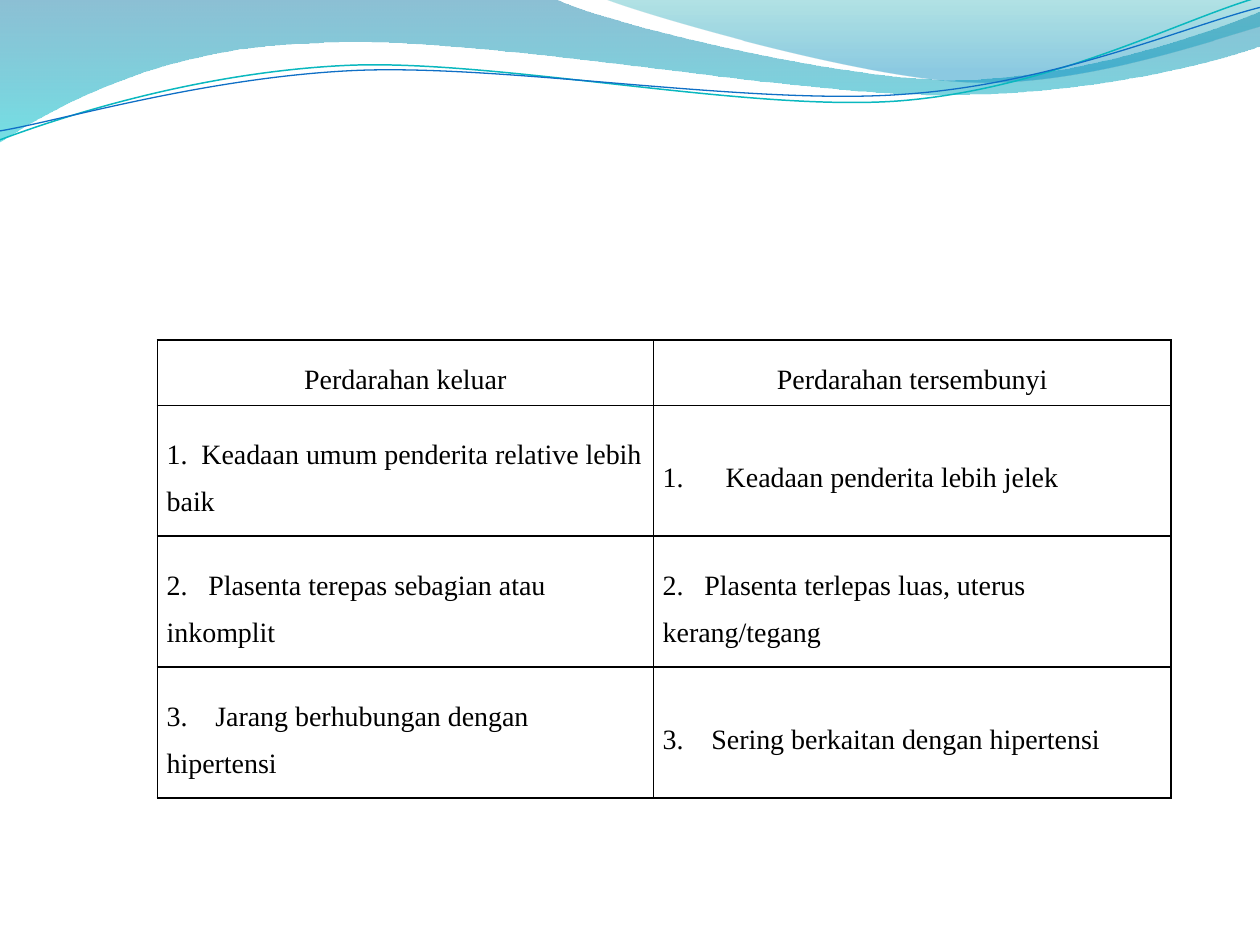
from dataclasses import dataclass
from typing import Optional

import pptx
import pptx.dml.color
import pptx.enum.text
import pptx.oxml
import pptx.oxml.ns
import pptx.util
from lxml import etree

Cm = pptx.util.Cm
Pt = pptx.util.Pt
RGBColor = pptx.dml.color.RGBColor
Align = pptx.enum.text.PP_ALIGN
qn = pptx.oxml.ns.qn

BLACK = RGBColor(0x00, 0x00, 0x00)
DEEP_BLUE = RGBColor(0x00, 0x74, 0xA1)
TURQUOISE = RGBColor(0x00, 0xC6, 0xCF)
TEAL = RGBColor(0x00, 0xA1, 0xA9)
SKY_BLUE = RGBColor(0x00, 0x8B, 0xBF)
LINE_TEAL = RGBColor(0x0A, 0xB8, 0xBF)
LINE_BLUE = RGBColor(0x0F, 0x6F, 0xC6)

FONT = "Times New Roman"


@dataclass
class Stop:
    position: float
    color: RGBColor
    opacity: int


@dataclass
class Wave:
    start: tuple
    segments: list
    stops: tuple = ()
    color: Optional[RGBColor] = None
    width: float = 0
    rotation: float = 0


@dataclass
class Item:
    text: str
    tab: float = 0


WAVES = [
    Wave((0, 0), [
        ((11.18, -0.03),),
        ((12.09, 0.43), (16.87, 1.6), (19.25, 1.6)),
        ((21.67, 1.6), (24.33, 0.66), (25.4, 0.23)),
        ((25.43, 0.91),),
        ((24.97, 1.12), (22.1, 1.93), (18.95, 1.91)),
        ((15.8, 1.91), (9.7, 0.71), (6.53, 0.86)),
        ((3.28, 0.91), (1.17, 2.11), (-0.03, 2.87)),
    ], stops=(Stop(0, DEEP_BLUE, 45), Stop(1, TURQUOISE, 55))),
    Wave((12.17, -0.03), [
        ((12.93, 0.28), (17.32, 1.57), (19.53, 1.65)),
        ((21.74, 1.75), (24.41, 0.81), (25.4, 0.53)),
        ((25.4, 0),),
    ], stops=(Stop(0, TEAL, 30), Stop(0.8, SKY_BLUE, 45))),
    Wave((-0.05, 2.22), [
        ((1.19, 1.82), (4.02, 1.04), (7.05, 1.05)),
        ((10.05, 1.07), (15.02, 2.37), (18.08, 2.29)),
        ((21.14, 2.2), (23.87, 0.91), (25.41, 0.55)),
    ], color=LINE_TEAL, width=0.85, rotation=-2.7),
    Wave((-0.04, 2.04), [
        ((1.16, 1.9), (4.18, 1.15), (7.2, 1.16)),
        ((10.25, 1.18), (15.13, 2.25), (18.19, 2.16)),
        ((21.21, 2.1), (23.93, 1.06), (25.45, 0.75)),
    ], color=LINE_BLUE, width=0.75, rotation=-2.7),
]

ROWS = [
    (Item("Perdarahan keluar"), Item("Perdarahan tersembunyi")),
    (Item("1.\tKeadaan umum penderita relative lebih baik", 0.7),
     Item("1.\tKeadaan penderita lebih jelek", 1.27)),
    (Item("2.\tPlasenta terepas sebagian atau inkomplit", 0.84),
     Item("2.\tPlasenta terlepas luas, uterus kerang/tegang", 0.84)),
    (Item("3.\tJarang berhubungan dengan hipertensi", 0.98),
     Item("3.\tSering berkaitan dengan hipertensi", 0.98)),
]
COLUMN_WIDTHS = (10, 10.44)
ROW_HEIGHTS = (1.32, 2.64, 2.64, 2.64)


def bend(sp: pptx.shapes.autoshape.Shape, segments: list) -> None:
    lines = iter(list(sp._element.iter(qn("a:lnTo"))))
    for segment in segments:
        group = [next(lines) for _ in segment]
        if len(group) == 1:
            continue
        curve = etree.Element(qn("a:cubicBezTo"))
        group[0].addprevious(curve)
        for line in group:
            curve.append(line[0])
            line.getparent().remove(line)


def draw_wave(s: pptx.slide.Slide, wave: Wave) -> None:
    points = [(Cm(x), Cm(y)) for segment in wave.segments for x, y in segment]
    builder = s.shapes.build_freeform(Cm(wave.start[0]), Cm(wave.start[1]))
    builder.add_line_segments(points, close=bool(wave.stops))
    sp = builder.convert_to_shape()
    bend(sp, wave.segments)
    sp.rotation = wave.rotation
    sp.shadow.inherit = False
    if not wave.stops:
        sp.fill.background()
        sp.line.color.rgb = wave.color
        sp.line.width = Pt(wave.width)
        return
    sp.line.fill.background()
    sp.fill.gradient()
    sp.fill.gradient_angle = 270
    for target, stop in zip(sp.fill.gradient_stops, wave.stops):
        target.position = stop.position
        target.color.rgb = stop.color
    colors = sp._element.spPr.find(qn("a:gradFill")).iter(qn("a:srgbClr"))
    for color, stop in zip(colors, wave.stops):
        etree.SubElement(color, qn("a:alpha"), val=str(stop.opacity * 1000))


def write(tf: pptx.text.text.TextFrame, text: str, *, size: float = 16,
          color: RGBColor = BLACK, align: Align = Align.LEFT, tab: float = 0) -> None:
    p = tf.paragraphs[0]
    p.alignment = align
    p.line_spacing = 1.5
    if tab:
        tabs = etree.SubElement(p._p.get_or_add_pPr(), qn("a:tabLst"))
        etree.SubElement(tabs, qn("a:tab"), pos=str(Cm(tab)), algn="l")
    r = p.add_run()
    r.text = text
    r.font.name = FONT
    r.font.size = Pt(size)
    r.font.color.rgb = color


def add_borders(cell: pptx.table._Cell, color: RGBColor, width: float) -> None:
    tc_pr = cell._tc.get_or_add_tcPr()
    for index, side in enumerate(("lnL", "lnR", "lnT", "lnB")):
        ln = etree.Element(qn(f"a:{side}"), w=str(Pt(width)))
        fill = etree.SubElement(ln, qn("a:solidFill"))
        etree.SubElement(fill, qn("a:srgbClr"), val=str(color))
        tc_pr.insert(index, ln)


def draw_table(s: pptx.slide.Slide, left: float, top: float) -> None:
    table = s.shapes.add_table(len(ROWS), len(COLUMN_WIDTHS), Cm(left), Cm(top),
                               Cm(sum(COLUMN_WIDTHS)), Cm(sum(ROW_HEIGHTS))).table
    table.first_row = table.horz_banding = False
    for column, width in zip(table.columns, COLUMN_WIDTHS):
        column.width = Cm(width)
    for i, (items, height) in enumerate(zip(ROWS, ROW_HEIGHTS)):
        table.rows[i].height = Cm(height)
        for j, item in enumerate(items):
            cell = table.cell(i, j)
            cell.fill.background()
            cell.margin_left = cell.margin_right = Cm(0.19)
            cell.margin_top = cell.margin_bottom = 0
            cell.vertical_anchor = pptx.enum.text.MSO_ANCHOR.MIDDLE
            add_borders(cell, BLACK, 1)
            write(cell.text_frame, item.text, tab=item.tab,
                  align=Align.LEFT if i else Align.CENTER)


def main() -> None:
    prs = pptx.Presentation()
    prs.slide_width, prs.slide_height = Cm(25.4), Cm(19.05)
    s = prs.slides.add_slide(prs.slide_layouts[6])
    for wave in WAVES:
        draw_wave(s, wave)
    draw_table(s, 3.17, 6.85)
    prs.save("out.pptx")


if __name__ == "__main__":
    main()
